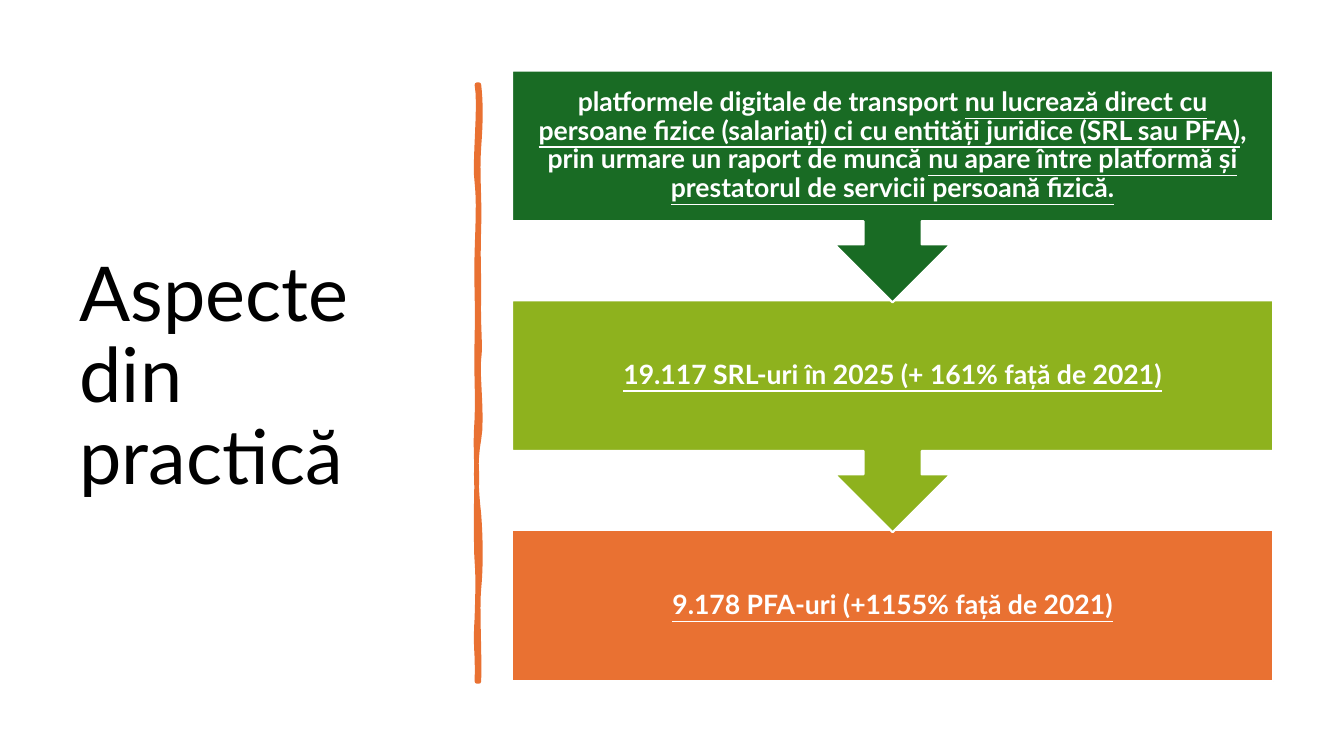
from pptx import Presentation
from pptx.dml.color import RGBColor
from pptx.enum.shapes import MSO_SHAPE
from pptx.enum.text import MSO_ANCHOR, PP_ALIGN
from pptx.util import Inches, Pt

WHITE, BLACK, ORANGE, LIME, GREEN = "FFFFFF", "000000", "E97132", "8EB21E", "196B24"

# Bezier points in inches: a start, then two controls and an end per curve
RIGHT_EDGE = [(4.75, 0.84),
              (4.77, 1.02), (4.77, 1.19), (4.75, 1.46),
              (4.73, 1.73), (4.76, 1.95), (4.75, 2.26),
              (4.74, 2.57), (4.75, 2.62), (4.75, 2.94),
              (4.74, 3.25), (4.77, 3.42), (4.75, 3.56),
              (4.73, 3.7), (4.79, 4.14), (4.75, 4.36),
              (4.71, 4.57), (4.72, 4.84), (4.75, 5.1),
              (4.77, 5.36), (4.77, 5.64), (4.75, 5.84),
              (4.73, 6.03), (4.76, 6.5), (4.75, 6.76)]
LEFT_EDGE = [(4.73, 6.76),
             (4.74, 6.46), (4.71, 6.44), (4.73, 6.13),
             (4.74, 5.83), (4.74, 5.7), (4.73, 5.57),
             (4.72, 5.44), (4.72, 4.95), (4.73, 4.77),
             (4.73, 4.59), (4.71, 4.45), (4.73, 4.15),
             (4.74, 3.86), (4.72, 3.73), (4.73, 3.35),
             (4.74, 2.98), (4.72, 2.81), (4.73, 2.5),
             (4.74, 2.18), (4.75, 2), (4.73, 1.81),
             (4.7, 1.63), (4.77, 1.04), (4.73, 0.84)]

# Each step: preset, fill, height in % of the slide, runs as (text, underlined)
STEPS = [
    (MSO_SHAPE.DOWN_ARROW_CALLOUT, GREEN, 30.67, [
        ("platformele digitale de transport ", False),
        ("nu lucrează direct cu persoane fizice (salariați) ci cu entități "
         "juridice (SRL sau PFA)", True),
        (", prin urmare un raport de muncă ", False),
        ("nu apare între platformă și prestatorul de servicii persoană fizică.", True)]),
    (MSO_SHAPE.DOWN_ARROW_CALLOUT, LIME, 30.67, [
        ("19.117 SRL-uri în 2025 (+ 161% față de 2021)", True)]),
    (MSO_SHAPE.RECTANGLE, ORANGE, 20, [
        ("9.178 PFA-uri (+1155% față de 2021)", True)]),
]
TOP, STEP_PITCH = 9.33, 30.4


def rgb(color):
    return RGBColor.from_string(color)


def flatten(points, steps=8):
    """Return points along a chain of cubic Bezier curves."""
    result = [points[0]]
    for i in range(0, len(points) - 1, 3):
        curve = points[i:i + 4]
        for n in range(1, steps + 1):
            t = n / steps
            weights = ((1 - t) ** 3, 3 * t * (1 - t) ** 2, 3 * t * t * (1 - t), t ** 3)
            result.append(tuple(sum(w * pt[axis] for w, pt in zip(weights, curve))
                                for axis in (0, 1)))
    return result


class Deck:
    font = "Lato"

    def __init__(self):
        self.prs = Presentation()
        self.prs.slide_width, self.prs.slide_height = Inches(13.33), Inches(7.5)
        self.s = self.prs.slides.add_slide(self.prs.slide_layouts[6])

    def box(self, left, top, width, height):
        """Turn percentages of the slide into lengths."""
        w, h = self.prs.slide_width, self.prs.slide_height
        return [int(share * full / 100)
                for share, full in zip((left, top, width, height), (w, h, w, h))]

    def paint(self, sp, fill, line, width):
        sp.shadow.inherit = False
        sp.fill.solid()
        sp.fill.fore_color.rgb = rgb(fill)
        sp.line.color.rgb = rgb(line)
        sp.line.width = Pt(width)

    def add_text(self, sp, runs, size, color, align, bold=False):
        tf = sp.text_frame
        tf.word_wrap = True
        tf.vertical_anchor = MSO_ANCHOR.MIDDLE
        p = tf.paragraphs[0]
        p.alignment, p.line_spacing = align, 0.9
        for text, underlined in runs:
            r = p.add_run()
            r.text = text
            r.font.name, r.font.size = self.font, Pt(size)
            r.font.bold, r.font.underline = bold, underlined
            r.font.color.rgb = rgb(color)

    def title(self, text, *shares):
        sp = self.s.shapes.add_textbox(*self.box(*shares))
        self.add_text(sp, [(text, False)], 54, BLACK, PP_ALIGN.LEFT)

    def step(self, preset, fill, runs, *shares):
        sp = self.s.shapes.add_shape(preset, *self.box(*shares))
        self.paint(sp, fill, WHITE, 1.5)
        tf = sp.text_frame
        tf.margin_left = tf.margin_right = tf.margin_top = tf.margin_bottom = Inches(0.15)
        self.add_text(sp, runs, 19, WHITE, PP_ALIGN.CENTER, bold=True)

    def brush_stroke(self, color, *edges):
        points = [(Inches(x), Inches(y)) for edge in edges for x, y in flatten(edge)]
        builder = self.s.shapes.build_freeform(*points[0])
        builder.add_line_segments(points[1:], close=True)
        self.paint(builder.convert_to_shape(), color, color, 3.25)


def main():
    deck = Deck()
    deck.title("Aspecte din practică", 5.18, TOP, 28.06, 81.47)
    deck.brush_stroke(ORANGE, RIGHT_EDGE, LEFT_EDGE)
    # Last step first, so that each arrow tip lies over the box below it
    for row, (preset, fill, height, runs) in reversed(list(enumerate(STEPS))):
        deck.step(preset, fill, runs, 38.1, TOP + row * STEP_PITCH, 56.63, height)
    deck.prs.save("out.pptx")


if __name__ == "__main__":
    main()
